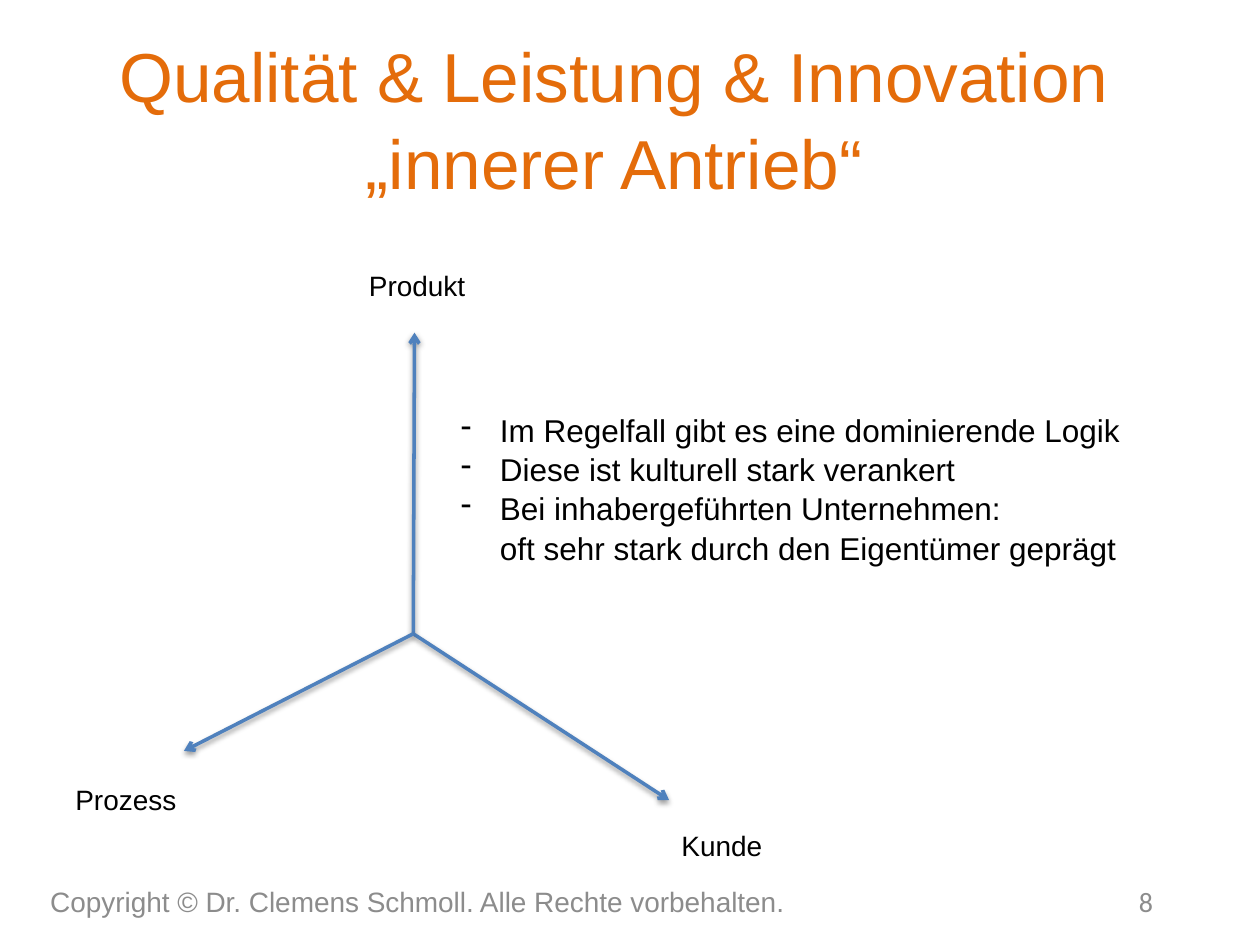
"""Build the slide on the three drives: product, process and customer."""
from lxml import etree
from pptx import Presentation
from pptx.dml.color import RGBColor as Rgb
from pptx.enum.shapes import MSO_CONNECTOR as Conn
from pptx.enum.text import MSO_ANCHOR as Anchor, PP_ALIGN as Align
from pptx.oxml import parse_xml
from pptx.oxml.ns import qn
from pptx.util import Inches, Pt

BLACK, GREY, BLUE, ORANGE = "000000", "8C8C8C", "4F81BD", "E46C0A"
NS = "http://schemas.openxmlformats.org/drawingml/2006/main"
TITLE = "Qualität & Leistung & Innovation „innerer Antrieb“"
POINTS = [
    ["Im Regelfall gibt es eine dominierende Logik"],
    ["Diese ist kulturell stark verankert"],
    ["Bei inhabergeführten Unternehmen:",
     "oft sehr stark durch den Eigentümer geprägt"],
]
HUB = (3.28, 5.03)
AXES = [
    ("Produkt", (3.29, 2.64), (2.83, 2.08, 0.98, 0.37)),
    ("Kunde", (5.31, 6.35), (5.31, 6.53, 0.85, 0.37)),
    ("Prozess", (1.46, 5.96), (0.5, 6.16, 1.02, 0.37)),
]
COPY = "Copyright © Dr. Clemens Schmoll. Alle Rechte vorbehalten."
SHADOW = (
    f'<a:effectLst xmlns:a="{NS}"><a:outerShdw blurRad="40000" dist="20000" '
    'dir="5400000" rotWithShape="0"><a:srgbClr val="000000">'
    '<a:alpha val="38000"/></a:srgbClr></a:outerShdw></a:effectLst>'
)


def tint(code):
    """Turn a hex string into a colour."""
    return Rgb.from_string(code)


def add_text(slide, box, paras, size, color, face="Arial", align=Align.LEFT,
             anchor=Anchor.TOP, wrap=True, dash=False, gap=None):
    """Add a text box; each paragraph is a list of lines."""
    frame = slide.shapes.add_textbox(*map(Inches, box)).text_frame
    frame.word_wrap = wrap
    frame.vertical_anchor = anchor
    for i, lines in enumerate(paras):
        para = frame.paragraphs[0] if i == 0 else frame.add_paragraph()
        para.alignment = align
        if gap:
            para.line_spacing = gap
        if dash:
            props = para._p.get_or_add_pPr()
            props.set("marL", str(Inches(0.31)))
            props.set("indent", str(-Inches(0.31)))
            etree.SubElement(props, qn("a:buChar")).set("char", "-")
        for j, line in enumerate(lines):
            if j:
                para.add_line_break()
            run = para.add_run()
            run.text = line
            run.font.name = face
            run.font.size = Pt(size)
            run.font.color.rgb = tint(color)


def add_arrow(slide, start, end):
    """Add a shadowed line with an open arrowhead at its end."""
    line = slide.shapes.add_connector(
        Conn.STRAIGHT, *map(Inches, start + end))
    line.line.color.rgb = tint(BLUE)
    line.line.width = Pt(2)
    pen = line.line._get_or_add_ln()
    etree.SubElement(pen, qn("a:tailEnd")).set("type", "arrow")
    line._element.spPr.append(parse_xml(SHADOW))


def main():
    """Lay out the slide and save it."""
    deck = Presentation()
    deck.slide_width, deck.slide_height = Inches(10), Inches(7.5)
    slide = deck.slides.add_slide(deck.slide_layouts[6])
    add_text(slide, (0.5, 0.3, 8.75, 1.25), [[TITLE]], 39.6, ORANGE,
             align=Align.CENTER, anchor=Anchor.MIDDLE, gap=1.04)
    add_text(slide, (3.56, 3.2, 5.49, 1.55), POINTS, 18, BLACK,
             wrap=False, dash=True, gap=1.04)
    for name, tip, box in AXES:
        add_arrow(slide, HUB, tip)
        add_text(slide, box, [[name]], 16, BLACK, wrap=False)
    add_text(slide, (0.3, 6.95, 6.36, 0.4), [[COPY]], 16, GREY,
             anchor=Anchor.MIDDLE)
    add_text(slide, (6.92, 6.95, 2.33, 0.4), [["8"]], 16, GREY, "Calibri",
             Align.RIGHT, Anchor.MIDDLE)
    deck.save("out.pptx")


if __name__ == "__main__":
    main()
